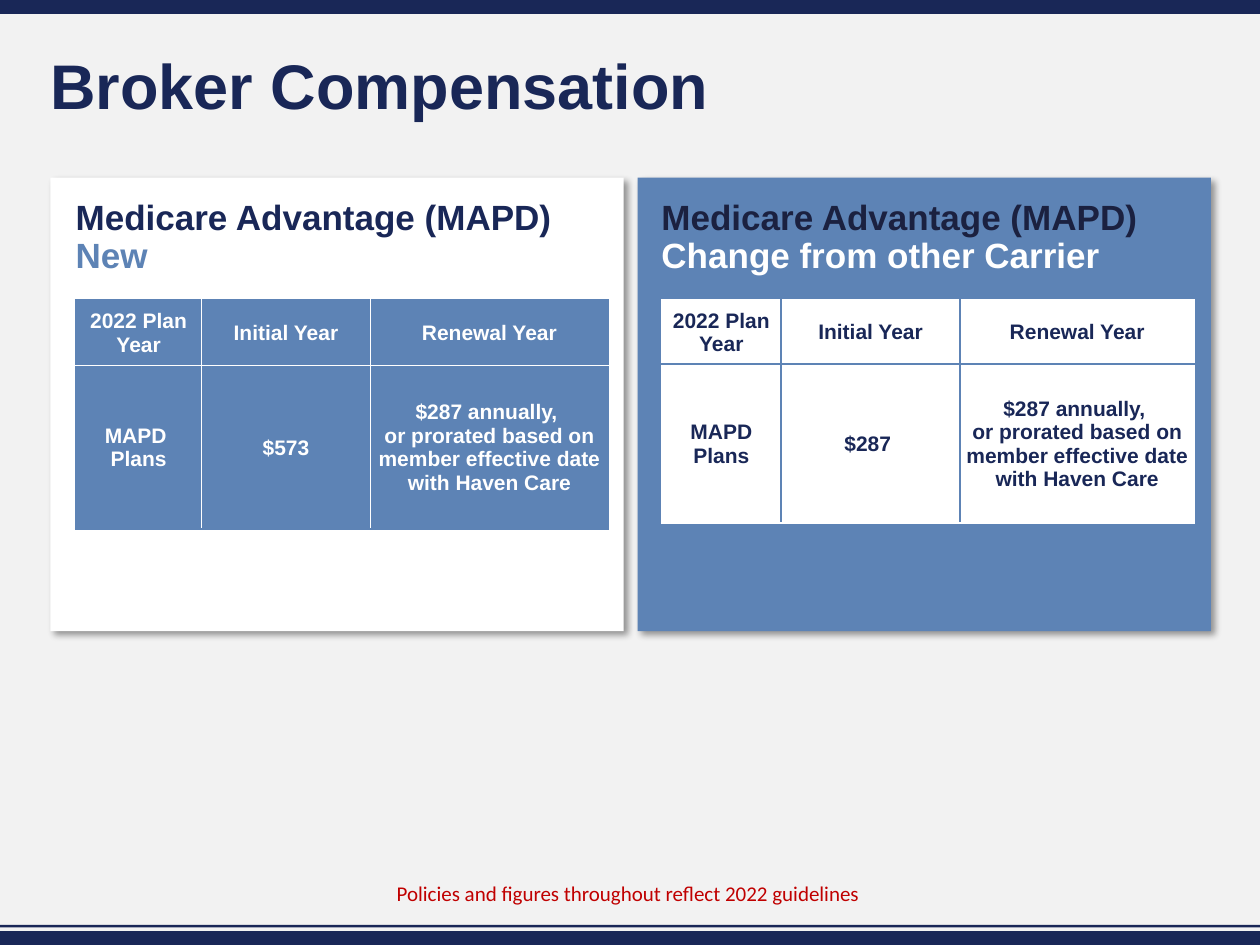
"""Build the broker compensation slide on a grid of 100 columns by 75 rows."""
from dataclasses import dataclass

from lxml import etree
from pptx import Presentation
from pptx import util as u
from pptx.dml.color import RGBColor
from pptx.enum import shapes, text
from pptx.oxml import parse_xml
from pptx.oxml.ns import nsdecls, qn

NAVY = RGBColor(0x19, 0x27, 0x57)
INK = RGBColor(0x1B, 0x21, 0x40)
BLUE = RGBColor(0x5D, 0x83, 0xB5)
WHITE = RGBColor(0xFF, 0xFF, 0xFF)
RED = RGBColor(0xC0, 0x00, 0x00)
PALE = RGBColor(0xF2, 0xF2, 0xF2)

COLUMNS, ROWS = 100, 75
SHADOW = (
    f'<a:effectLst {nsdecls("a")}><a:outerShdw blurRad="50800" dist="38100" '
    'dir="2700000" algn="tl" rotWithShape="0"><a:srgbClr val="000000">'
    '<a:alpha val="40000"/></a:srgbClr></a:outerShdw></a:effectLst>'
)
HEADERS = ["2022 Plan Year", "Initial Year", "Renewal Year"]
RENEWAL = "$287 annually, \nor prorated based on member effective date with Haven Care"


@dataclass(frozen=True)
class Frame:
    left: float
    top: float
    width: float
    height: float


@dataclass(frozen=True)
class Panel:
    frame: Frame
    color: RGBColor
    heading: Frame
    heading_color: RGBColor
    kind: str
    kind_color: RGBColor
    table: Frame
    columns: tuple
    rows: tuple
    cell_fill: RGBColor
    cell_text: RGBColor
    plan: str
    initial: str


PANELS = [
    Panel(Frame(50.6, 14.1, 45.5, 36), BLUE, Frame(52.5, 15.9, 41.3, 33.9), INK,
          "Change from other Carrier", WHITE, Frame(52.5, 23.8, 42.4, 17.7),
          (9.5, 14.2, 18.6), (5.1, 12.6), WHITE, NAVY, "MAPD Plans", "$287 "),
    Panel(Frame(4, 14.1, 45.5, 36), WHITE, Frame(6, 15.9, 41.7, 33.4), NAVY,
          "New", BLUE, Frame(6, 23.8, 42.3, 18.1),
          (10, 13.4, 18.9), (5.2, 13), BLUE, WHITE, "MAPD \vPlans", "$573"),
]
BARS = [Frame(0, 0, 100, 1.1), Frame(0, 73.9, 100, 1.1), Frame(0, 73.4, 100, 0.2)]

deck = Presentation()
deck.slide_width, deck.slide_height = u.Inches(10), u.Inches(7.5)
page = deck.slides.add_slide(deck.slide_layouts[1])


def across(columns: float) -> int:
    return round(deck.slide_width * columns / COLUMNS)


def down(rows: float) -> int:
    return round(deck.slide_height * rows / ROWS)


def place(frame: Frame) -> tuple:
    return across(frame.left), down(frame.top), across(frame.width), down(frame.height)


def move(box, frame: Frame) -> None:
    box.left, box.top, box.width, box.height = place(frame)
    page.shapes.element.append(box.element)


def write(frame, spans: list, *, size: float, font: str = "Arial", bold: bool = True,
          align=text.PP_ALIGN.LEFT, spacing: float = 1.0, inset: float = 0,
          anchor=text.MSO_ANCHOR.TOP) -> None:
    frame.word_wrap = True
    frame.auto_size = text.MSO_AUTO_SIZE.NONE
    frame.vertical_anchor = anchor
    frame.margin_left = frame.margin_right = across(inset)
    frame.margin_top = frame.margin_bottom = down(inset / 2)
    para = frame.paragraphs[0]
    properties = para._p.get_or_add_pPr()
    properties.set("marL", "0")
    properties.set("indent", "0")
    etree.SubElement(properties, qn("a:buNone"))
    para.alignment, para.line_spacing, para.space_before = align, spacing, u.Pt(0)
    for words, color in spans:
        span = para.add_run()
        span.text = words
        style(span.font, size=size, font=font, bold=bold, color=color)


def style(target, *, size: float, font: str, bold: bool, color: RGBColor) -> None:
    target.size, target.name, target.bold = u.Pt(size), font, bold
    target.color.rgb = color


def draw_block(frame: Frame, color: RGBColor, shadow: bool = False) -> None:
    block = page.shapes.add_shape(shapes.MSO_SHAPE.RECTANGLE, *place(frame))
    block.fill.solid()
    block.fill.fore_color.rgb = color
    block.line.fill.background()
    if shadow:
        block.element.spPr.append(parse_xml(SHADOW))
    else:
        block.shadow.inherit = False


def draw_border(cell, side: str, color: RGBColor) -> None:
    line = etree.SubElement(cell._tc.get_or_add_tcPr(), qn(f"a:ln{side}"), w="12700")
    fill = etree.SubElement(line, qn("a:solidFill"))
    etree.SubElement(fill, qn("a:srgbClr"), val=str(color))


def fill_cell(cell, words: str, panel: Panel, inner: dict) -> None:
    for side, is_inner in inner.items():
        draw_border(cell, side, panel.color if is_inner else panel.cell_fill)
    cell.fill.solid()
    cell.fill.fore_color.rgb = panel.cell_fill
    cell.vertical_anchor = text.MSO_ANCHOR.MIDDLE
    cell.margin_left = cell.margin_right = cell.margin_top = across(0.1)
    cell.margin_bottom = 0
    cell.text = words
    for para in cell.text_frame.paragraphs:
        para.alignment = text.PP_ALIGN.CENTER
        for span in para.runs:
            style(span.font, size=12, font="Arial", bold=True, color=panel.cell_text)


def draw_table(panel: Panel) -> None:
    values = [HEADERS, [panel.plan, panel.initial, RENEWAL]]
    table = page.shapes.add_table(2, 3, *place(panel.table)).table
    table.first_row = table.horz_banding = False
    for column, width in zip(table.columns, panel.columns):
        column.width = across(width)
    for row, height in zip(table.rows, panel.rows):
        row.height = down(height)
    for r, line in enumerate(values):
        for c, words in enumerate(line):
            inner = {"L": c > 0, "R": c < 2, "T": r > 0, "B": r < 1}
            fill_cell(table.cell(r, c), words, panel, inner)


def main() -> None:
    page.background.fill.solid()
    page.background.fill.fore_color.rgb = PALE
    for bar in BARS:
        draw_block(bar, NAVY)
    note = page.shapes.add_textbox(*place(Frame(30.5, 69.4, 39, 3)))
    write(note.text_frame, [("Policies and figures throughout reflect 2022 guidelines", RED)],
          size=12, font="Calibri", bold=False, inset=1)
    for panel in PANELS:
        draw_block(panel.frame, panel.color, shadow=True)

    title, body = page.placeholders
    move(title, Frame(4, 4, 92, 6.2))
    write(title.text_frame, [("Broker Compensation", NAVY)], size=36, spacing=0.9,
          anchor=text.MSO_ANCHOR.MIDDLE)
    change_box = page.shapes.add_textbox(0, 0, 0, 0)
    for panel, box in zip(PANELS, (change_box, body)):
        move(box, panel.heading)
        write(box.text_frame, [("Medicare Advantage (MAPD) ", panel.heading_color),
                               (panel.kind, panel.kind_color)], size=20, spacing=0.9)
        draw_table(panel)
    deck.save("out.pptx")


if __name__ == "__main__":
    main()
